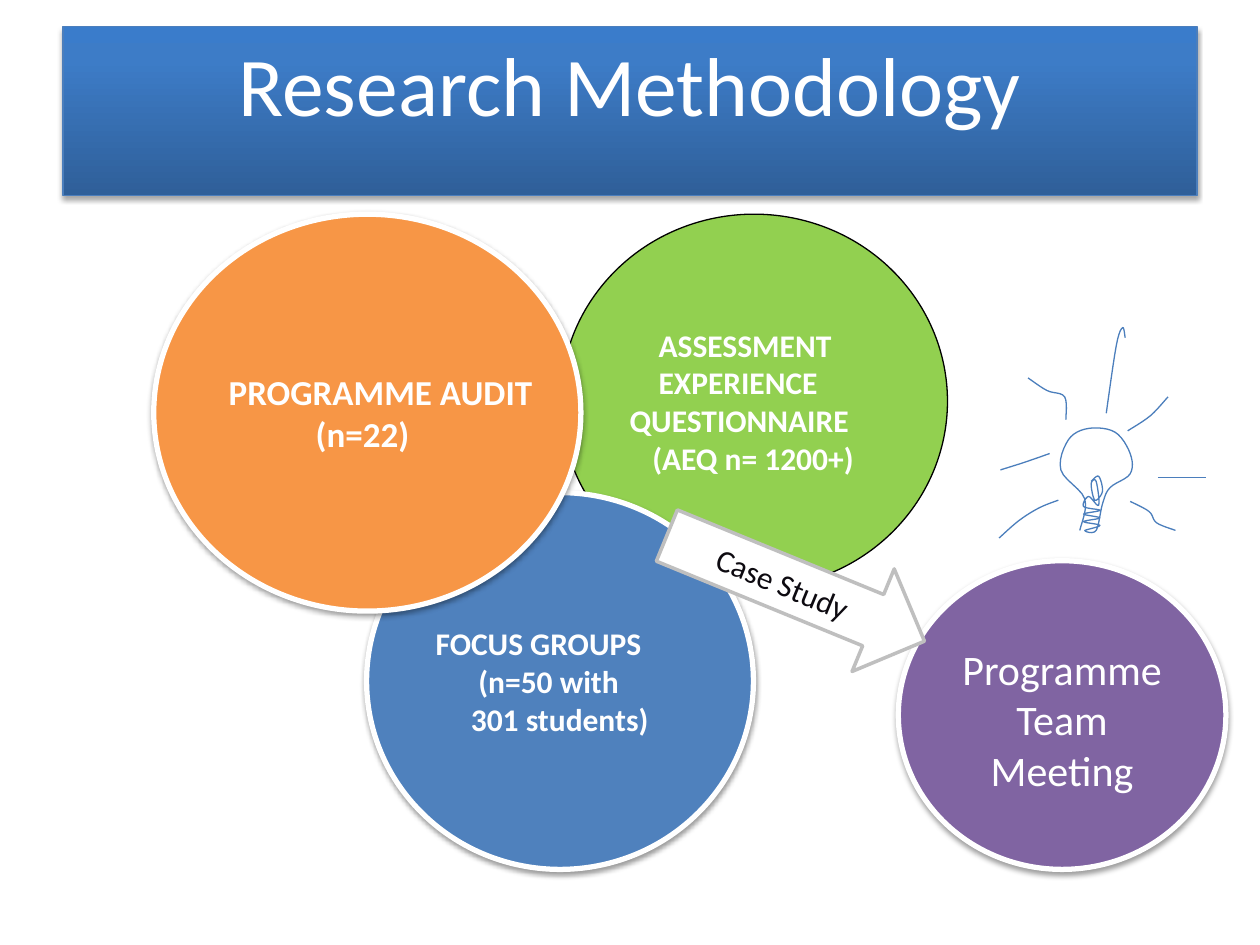
from lxml.etree import SubElement
from pptx import Presentation
from pptx.dml.color import RGBColor
from pptx.enum.shapes import MSO_CONNECTOR, MSO_SHAPE
from pptx.enum.text import MSO_ANCHOR, PP_ALIGN
from pptx.oxml.ns import qn
from pptx.util import Pt

PX = 9144
FONT = "Calibri"
CURVE_STEPS = 6

WHITE = RGBColor(0xFF, 0xFF, 0xFF)
BLACK = RGBColor(0x00, 0x00, 0x00)
GREEN = RGBColor(0x92, 0xD0, 0x50)
BLUE = RGBColor(0x4F, 0x81, 0xBD)
ORANGE = RGBColor(0xF7, 0x96, 0x46)
PURPLE = RGBColor(0x80, 0x64, 0xA2)
SILVER = RGBColor(0xBF, 0xBF, 0xBF)
INK = RGBColor(0x0D, 0x0A, 0x10)
SKETCH_BLUE = RGBColor(0x4B, 0x7E, 0xBC)
BANNER_STOPS = [
    (0, RGBColor(0x2F, 0x5F, 0x99)),
    (80, RGBColor(0x3D, 0x7C, 0xC7)),
    (100, RGBColor(0x3A, 0x7C, 0xCB)),
]

GLASS = [(857, 421), (861, 396), (842, 373), (848, 349), (864, 340),
         (885, 343), (897, 360), (897, 376), (881, 387), (875, 400),
         (870, 421), (861, 421)]
COIL = [point for y in (417, 411, 405) for point in ((873, y), (860, y - 3))]
FILAMENT = [(864, 394), (872, 401), (870, 382), (866, 384), (869, 397),
            (875, 390), (872, 378), (866, 382)]
RAYS = [
    [(895, 342), (913, 330), (927, 315)],
    [(878, 328), (886, 274), (891, 260), (893, 268)],
    [(846, 333), (845, 315), (831, 310), (816, 300)],
    [(833, 360), (813, 367), (794, 373)],
    [(840, 397), (825, 403), (809, 413), (793, 427)],
    [(897, 398), (912, 406), (918, 415), (933, 421)],
]


def style_line(line, color, width):
    line.color.rgb = color
    line.width = Pt(width)


def add_outlined(slide, preset, box, fill, line_color, line_width):
    shape = slide.shapes.add_shape(preset, *(v * PX for v in box))
    shape.shadow.inherit = False
    if fill is not None:
        shape.fill.solid()
        shape.fill.fore_color.rgb = fill
    style_line(shape.line, line_color, line_width)
    return shape


def cast_shadow(shape, opacity, distance):
    effects = shape._element.spPr.find(qn("a:effectLst"))
    shadow = SubElement(
        effects, qn("a:outerShdw"), blurRad=str(Pt(3.1)),
        dist=str(Pt(distance)), dir="5400000", rotWithShape="0")
    color = SubElement(shadow, qn("a:srgbClr"), val=str(BLACK))
    SubElement(color, qn("a:alpha"), val=str(opacity * 1000))


def fill_gradient(shape, stops):
    shape.fill.gradient()
    shape.fill.gradient_angle = 90
    stop_list = shape._element.spPr.find(qn("a:gradFill")).find(qn("a:gsLst"))
    for stop in list(stop_list):
        stop_list.remove(stop)
    for position, color in stops:
        stop = SubElement(stop_list, qn("a:gs"), pos=str(position * 1000))
        SubElement(stop, qn("a:srgbClr"), val=str(color))


def write_lines(shape, lines, size, color, bold=False,
                align=PP_ALIGN.CENTER, wrap=True, anchor=MSO_ANCHOR.MIDDLE):
    frame = shape.text_frame
    frame.word_wrap = wrap
    frame.vertical_anchor = anchor
    for index, (text, indent) in enumerate(lines):
        paragraph = frame.add_paragraph() if index else frame.paragraphs[0]
        paragraph.alignment = align
        if indent:
            paragraph._p.get_or_add_pPr().set("marL", str(indent * PX))
        run = paragraph.add_run()
        run.text = text
        run.font.name = FONT
        run.font.size = Pt(size)
        run.font.bold = bold
        run.font.color.rgb = color


def add_banner(slide, title):
    banner = add_outlined(slide, MSO_SHAPE.RECTANGLE, (50, 21, 900, 134),
                          None, SKETCH_BLUE, 0.75)
    fill_gradient(banner, BANNER_STOPS)
    cast_shadow(banner, 35, 1.8)
    write_lines(banner, [(title, 0)], 47.7, WHITE, anchor=MSO_ANCHOR.TOP)


def add_circle(slide, box, fill, rimmed=True):
    rim, width = (WHITE, 3) if rimmed else (BLACK, 0.75)
    circle = add_outlined(slide, MSO_SHAPE.OVAL, box, fill, rim, width)
    if rimmed:
        cast_shadow(circle, 38, 1.6)
    return circle


def add_method(slide, box, fill, lines, size=18, rimmed=True):
    circle = add_circle(slide, box, fill, rimmed)
    write_lines(circle, lines, size, WHITE, bold=True,
                align=PP_ALIGN.LEFT, wrap=False)


def spline(before, start, end, after, t):
    return 0.5 * (2 * start + (end - before) * t
                  + (2 * before - 5 * start + 4 * end - after) * t**2
                  + (3 * start - before - 3 * end + after) * t**3)


def smooth_path(points):
    padded = [points[0], *points, points[-1]]
    path = [points[0]]
    for corners in zip(padded, padded[1:], padded[2:], padded[3:]):
        for step in range(1, CURVE_STEPS + 1):
            path.append(tuple(spline(*axis, step / CURVE_STEPS)
                              for axis in zip(*corners)))
    return [(round(x * PX), round(y * PX)) for x, y in path]


def add_stroke(slide, points):
    start, *rest = smooth_path(points)
    builder = slide.shapes.build_freeform(*start)
    builder.add_line_segments(rest, close=False)
    outline = builder.convert_to_shape()
    outline.shadow.inherit = False
    outline.fill.background()
    style_line(outline.line, SKETCH_BLUE, 0.75)


def add_level_ray(slide, left, right, y):
    ray = slide.shapes.add_connector(
        MSO_CONNECTOR.STRAIGHT, left * PX, y * PX, right * PX, y * PX)
    style_line(ray.line, SKETCH_BLUE, 0.75)
    SubElement(ray._element.spPr, qn("a:effectLst"))


def main():
    deck = Presentation()
    deck.slide_width, deck.slide_height = 1000 * PX, 750 * PX
    slide = deck.slides.add_slide(deck.slide_layouts[6])

    add_banner(slide, "Research Methodology")
    add_method(slide, (445, 170, 307, 297), GREEN,
               [("ASSESSMENT", 23), ("EXPERIENCE", 23),
                ("QUESTIONNAIRE", 0), ("(AEQ n= 1200+)", 18)], rimmed=False)
    add_method(slide, (291, 391, 307, 299), BLUE,
               [("FOCUS GROUPS", 0), ("(n=50 with", 34),
                ("301 students)", 28)])
    add_method(slide, (122, 170, 339, 315), ORANGE,
               [("PROGRAMME AUDIT", 0), ("(n=22)", 69)], size=20)

    meeting = add_circle(slide, (713, 445, 260, 245), PURPLE)
    meeting.text_frame.margin_top = 11 * PX
    write_lines(meeting, [("Programme Team Meeting", 0)], 24, WHITE)

    case_study = add_outlined(slide, MSO_SHAPE.RIGHT_ARROW,
                              (521, 423, 221, 88), WHITE, SILVER, 2)
    case_study.rotation = 22.3
    write_lines(case_study, [("Case Study", 0)], 18, INK)

    for stroke in [GLASS + COIL + FILAMENT, *RAYS]:
        add_stroke(slide, stroke)
    add_level_ray(slide, 919, 957, 379)

    deck.save("out.pptx")


if __name__ == "__main__":
    main()
